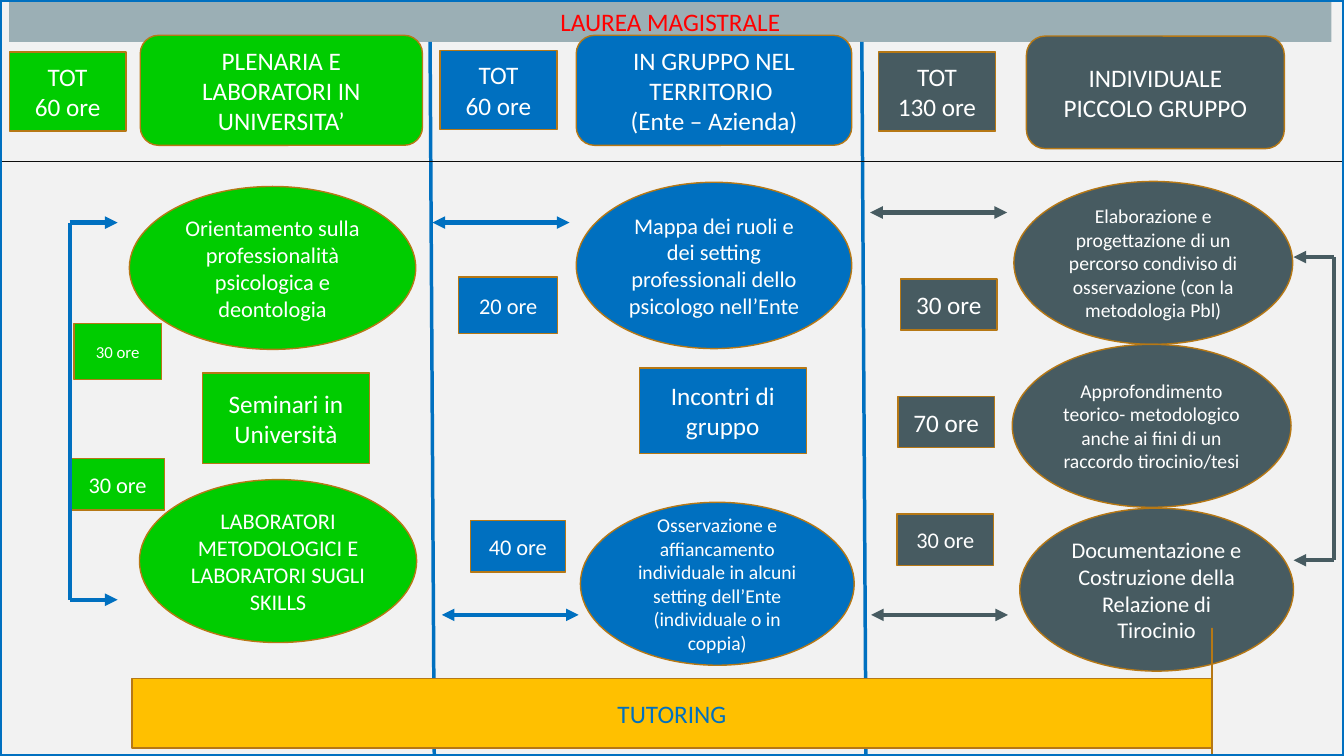
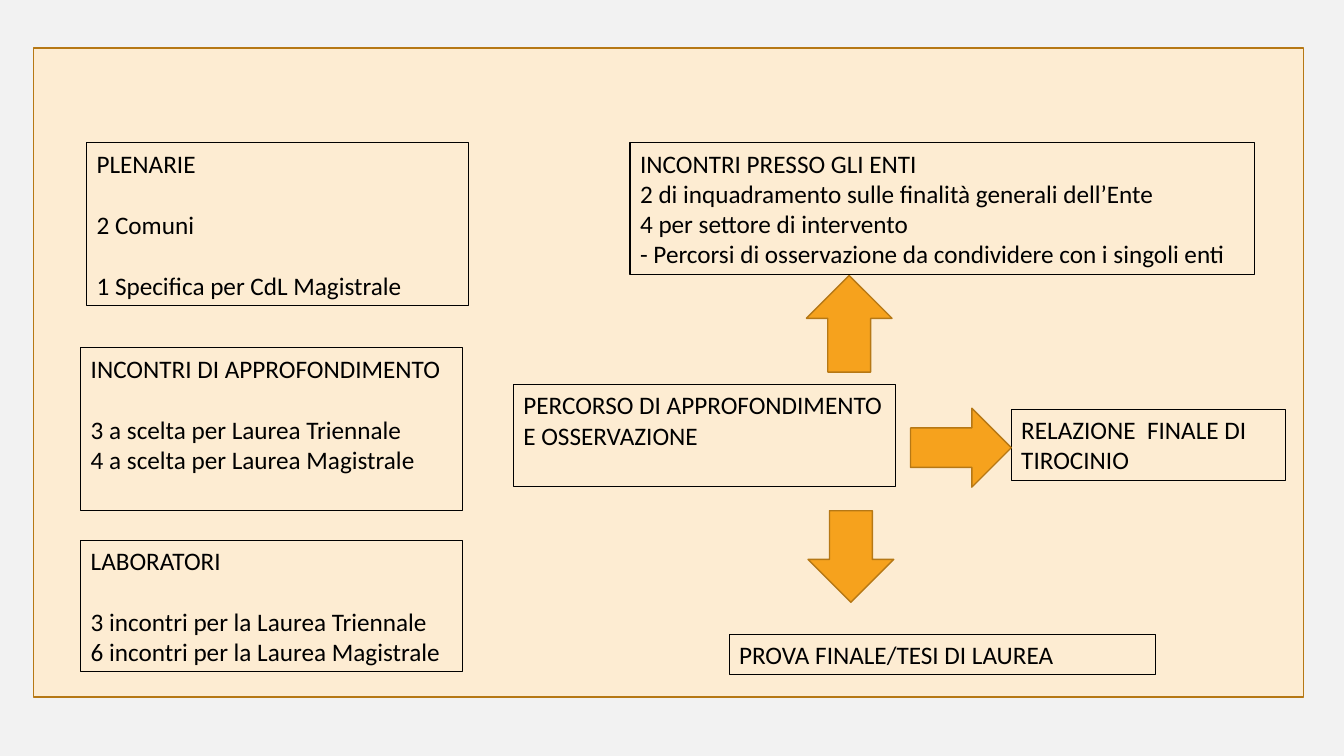
from dataclasses import dataclass
from lxml import etree
from pptx import Presentation, util as u
from pptx.dml.color import RGBColor
from pptx.enum import shapes, text
from pptx.oxml import ns


@dataclass(frozen=True)
class Theme:
    font: str = "Calibri"
    background: str = "F2F2F2"
    green: str = "00CC00"
    blue: str = "0070C0"
    slate: str = "475B61"
    banner: str = "9BAFB5"
    gold: str = "FFC000"
    orange: str = "F6A21D"
    cream: str = "FDECD2"
    outline: str = "B67815"
    red: str = "FF0000"
    white: str = "FFFFFF"
    black: str = "000000"
    rule: str = "0D0D0D"
    large: int = 18
    medium: int = 16
    small: int = 14
    tiny: int = 12
    gap: int = 22


theme = Theme()
kinds = shapes.MSO_SHAPE
center, left = text.PP_ALIGN.CENTER, text.PP_ALIGN.LEFT
middle, top = text.MSO_ANCHOR.MIDDLE, text.MSO_ANCHOR.TOP

presentation = Presentation()
presentation.slide_width = u.Inches(40 / 3)
presentation.slide_height = u.Inches(7.5)
column = presentation.slide_width / 160
row = presentation.slide_height / 90
presentation.slide_master.background.fill.solid()
presentation.slide_master.background.fill.fore_color.rgb = RGBColor.from_string(theme.background)


def dress(shape, box, words="", fill=None, line=theme.outline, width=1,
          size=theme.large, colour=theme.white, align=center, anchor=middle):
    x, y, wide, high = box
    shape.left, shape.top = int(x * column), int(y * row)
    shape.width, shape.height = int(wide * column), int(high * row)
    shape.shadow.inherit = False
    if fill:
        shape.fill.solid()
        shape.fill.fore_color.rgb = RGBColor.from_string(fill)
    else:
        shape.fill.background()
    if line:
        shape.line.color.rgb = RGBColor.from_string(line)
        shape.line.width = u.Pt(width)
    else:
        shape.line.fill.background()
    frame = shape.text_frame
    frame.text = words
    frame.word_wrap = True
    frame.auto_size = text.MSO_AUTO_SIZE.NONE
    frame.vertical_anchor = anchor
    for paragraph in frame.paragraphs:
        paragraph.alignment = align
        paragraph.space_before = u.Pt(0)
        for run in paragraph.runs:
            run.font.name = theme.font
            run.font.size = u.Pt(size)
            run.font.bold = False
            run.font.color.rgb = RGBColor.from_string(colour)
    return shape


def connect(slide, start, end, colour, width=3, arrows=()):
    connector = slide.shapes.add_connector(
        shapes.MSO_CONNECTOR.STRAIGHT, int(start[0] * column), int(start[1] * row),
        int(end[0] * column), int(end[1] * row))
    connector.line.color.rgb = RGBColor.from_string(colour)
    connector.line.width = u.Pt(width)
    properties = connector._element.spPr
    for arrow in arrows:
        etree.SubElement(properties.find(ns.qn("a:ln")), ns.qn("a:" + arrow), type="triangle")
    etree.SubElement(properties, ns.qn("a:effectLst"))


slide = presentation.slides.add_slide(presentation.slide_layouts.get_by_name("Title Only"))
dress(slide.shapes.title, (1.1, 0.2, 157.4, 4.8), "LAUREA MAGISTRALE",
      theme.banner, None, colour=theme.red, anchor=top)

lanes = [
    (theme.green, [
        (kinds.OVAL, (15.4, 22.2, 34.1, 19.4), theme.medium,
         "Orientamento sulla professionalità psicologica e deontologia"),
        (kinds.RECTANGLE, (24.1, 44.4, 19.9, 10.8), theme.large, "Seminari in Università"),
        (kinds.OVAL, (16.6, 57.1, 33, 19.4), theme.medium,
         "LABORATORI METODOLOGICI E LABORATORI SUGLI SKILLS"),
        (kinds.RECTANGLE, (8.8, 38.5, 10.4, 6.7), theme.tiny, "30 ore"),
        (kinds.RECTANGLE, (8.4, 54.6, 11.2, 6.1), theme.medium, "30 ore"),
        (kinds.RECTANGLE, (1.1, 6.2, 13.9, 9.4), theme.large, "TOT\n60 ore"),
        (kinds.ROUNDED_RECTANGLE, (16.7, 4.2, 33.6, 13.1), theme.large,
         "PLENARIA E LABORATORI IN UNIVERSITA’")]),
    (theme.blue, [
        (kinds.OVAL, (68.6, 21.7, 32.8, 19.8), theme.medium,
         "Mappa dei ruoli e dei setting professionali dello psicologo nell’Ente"),
        (kinds.RECTANGLE, (76.1, 43.8, 19.9, 10.2), theme.large, "Incontri di gruppo"),
        (kinds.OVAL, (69.1, 59.8, 32.6, 19.4), theme.small,
         "Osservazione e affiancamento individuale in alcuni setting dell’Ente "
         "(individuale o in coppia)"),
        (kinds.RECTANGLE, (54.6, 33, 11.8, 6.7), theme.medium, "20 ore"),
        (kinds.RECTANGLE, (56, 62, 11.3, 6.1), theme.medium, "40 ore"),
        (kinds.RECTANGLE, (52.4, 6, 13.9, 9.4), theme.large, "TOT\n60 ore"),
        (kinds.ROUNDED_RECTANGLE, (68.6, 4.2, 32.8, 13.1), theme.large,
         "IN GRUPPO NEL TERRITORIO \n(Ente – Azienda)")]),
    (theme.slate, [
        (kinds.OVAL, (120.7, 21.6, 33.2, 19.4), theme.small,
         "Elaborazione e progettazione di un percorso condiviso di osservazione "
         "(con la metodologia Pbl)"),
        (kinds.OVAL, (121.4, 60.5, 32.6, 19.4), theme.medium,
         "Documentazione e Costruzione della Relazione di Tirocinio"),
        (kinds.OVAL, (120.5, 41, 33.2, 19.4), theme.small,
         "Approfondimento teorico- metodologico anche ai fini di un raccordo tirocinio/tesi"),
        (kinds.RECTANGLE, (107.2, 33.2, 11.5, 6.1), theme.large, "30 ore"),
        (kinds.RECTANGLE, (106.9, 47.2, 11.5, 6.1), theme.large, "70 ore"),
        (kinds.RECTANGLE, (106.8, 61.2, 11.5, 6.1), theme.medium, "30 ore"),
        (kinds.RECTANGLE, (104.6, 6.2, 13.9, 9.4), theme.large, "TOT\n130 ore"),
        (kinds.ROUNDED_RECTANGLE, (122.2, 4.3, 30.7, 13.4), theme.large,
         "INDIVIDUALE\nPICCOLO GRUPPO")]),
]
for colour, items in lanes:
    for kind, box, size, words in items:
        dress(slide.shapes.add_shape(kind, 0, 0, 0, 0), box, words, colour, size=size)

for x in (51.2, 102.6):
    connect(slide, (x, 5), (x + 0.5, 90), theme.blue, 2.5)
connect(slide, (0, 19.2), (160, 19.2), theme.rule, 0.5)

for x, y, colour in [(52.6, 73.2, theme.blue), (51.5, 26.5, theme.blue),
                     (103.6, 25.3, theme.slate), (103.7, 73.2, theme.slate)]:
    connect(slide, (x, y), (x + 16.3, y), colour, arrows=("headEnd", "tailEnd"))

for spine, tip, first, last, colour in [(8.3, 14, 26.5, 71.4, theme.blue),
                                        (158.8, 154, 30.6, 66.7, theme.slate)]:
    connect(slide, (spine, first), (spine, last), colour)
    for y in (first, last):
        connect(slide, (spine, y), (tip, y), colour, arrows=("tailEnd",))

tutoring = slide.shapes.add_shape(kinds.RIGHT_ARROW, 0, 0, 0, 0)
tutoring.adjustments[0], tutoring.adjustments[1] = 0.41, 0
dress(tutoring, (15.7, 74.8, 128.6, 20.2), "TUTORING", theme.gold, colour=theme.blue)
dress(slide.shapes.add_shape(kinds.RECTANGLE, 0, 0, 0, 0), (0, 0, 160, 90),
      line=theme.blue, width=3)

slide = presentation.slides.add_slide(presentation.slide_layouts.get_by_name("Comparison"))
panel = dress(slide.shapes.add_shape(kinds.RECTANGLE, 0, 0, 0, 0),
              (4, 5.7, 151.2, 77.3), fill=theme.cream)
slide.shapes.title._element.addprevious(panel._element)

boxed = dict(line=theme.black, width=0.75, colour=theme.black, align=left, anchor=top)
dress(slide.shapes.title, (61.1, 45.8, 45.5, 12.1),
      "PERCORSO DI APPROFONDIMENTO E OSSERVAZIONE", **boxed)

lists = [
    ((10.3, 17, 45.5, 19.4), "PLENARIE\n2 Comuni\n1 Specifica per CdL Magistrale", (1, 2)),
    ((9.6, 41.4, 45.5, 19.4), "INCONTRI DI APPROFONDIMENTO\n3 a scelta per Laurea Triennale\n"
     "4 a scelta per Laurea Magistrale", (1,)),
    ((9.6, 64.3, 45.5, 15.7), "LABORATORI\n3 incontri per la Laurea Triennale\n"
     "6 incontri per la Laurea Magistrale", (1,)),
    ((75, 17, 74.3, 15.7), "INCONTRI PRESSO GLI ENTI\n"
     "2 di inquadramento sulle finalità generali dell’Ente\n4 per settore di intervento\n"
     "- Percorsi di osservazione da condividere con i singoli enti", ()),
]
for index, (box, words, spaced) in enumerate(lists, 1):
    body = dress(slide.placeholders[index], box, words, **boxed)
    for position, paragraph in enumerate(body.text_frame.paragraphs):
        paragraph.space_before = u.Pt(theme.gap if position in spaced else 0)
        properties = paragraph._p.get_or_add_pPr()
        properties.set("marL", "0")
        properties.set("indent", "0")
        etree.SubElement(properties, ns.qn("a:buNone"))

for box, words in [((86.8, 75.5, 50.8, 4.8), "PROVA FINALE/TESI DI LAUREA"),
                   ((120.4, 48.7, 32.6, 8.5), "RELAZIONE  FINALE DI TIROCINIO")]:
    dress(slide.shapes.add_textbox(0, 0, 0, 0), box, words, **boxed)

for kind, box in [(kinds.DOWN_ARROW, (96.2, 60.8, 10.2, 10.9)),
                  (kinds.UP_ARROW, (96, 32.8, 10.2, 11.5)),
                  (kinds.RIGHT_ARROW, (108.4, 48.6, 12, 9.4))]:
    dress(slide.shapes.add_shape(kind, 0, 0, 0, 0), box, fill=theme.orange)

presentation.save("out.pptx")
